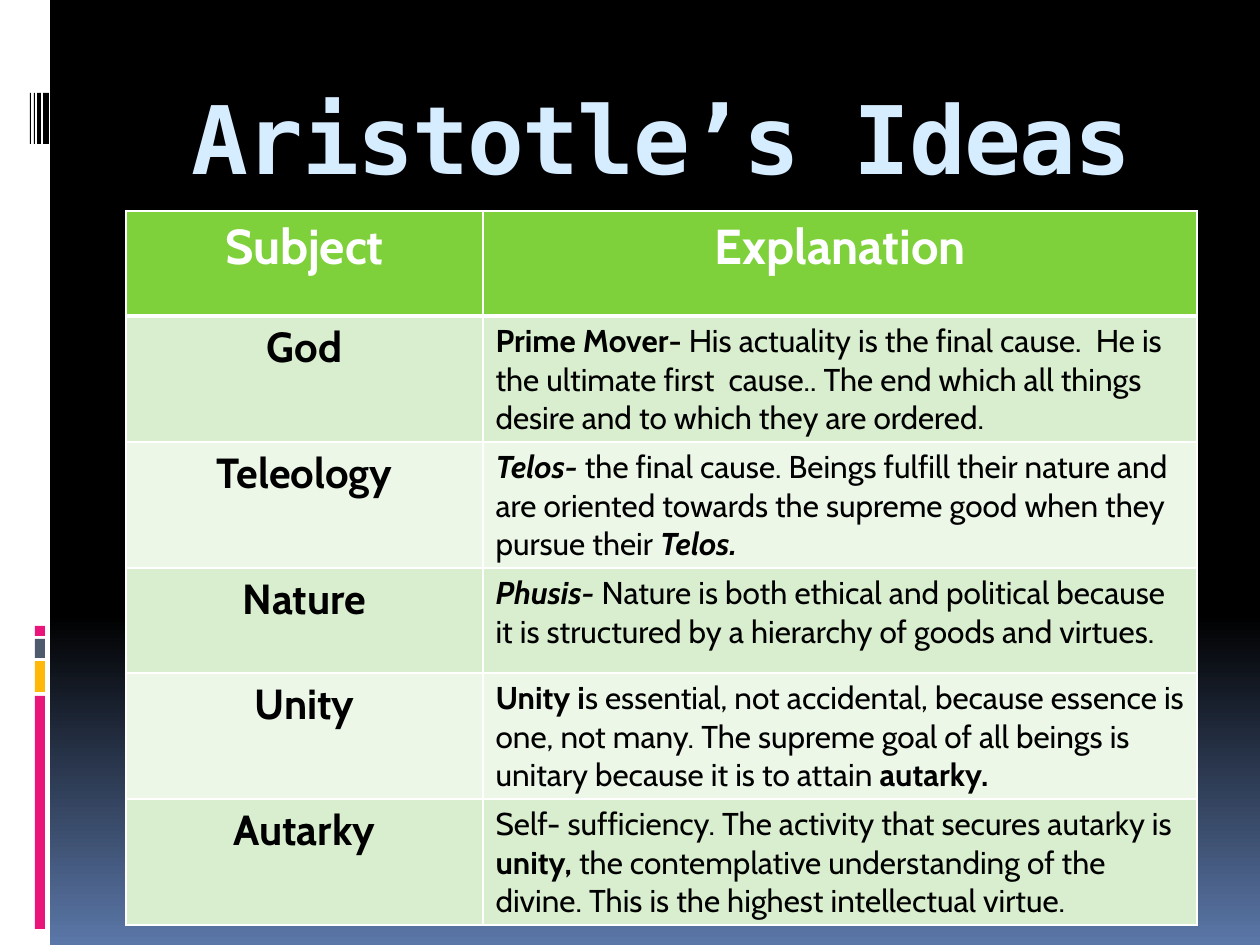
from copy import deepcopy

from lxml import etree
from pptx import Presentation, util as u
from pptx.dml.color import RGBColor
from pptx.enum import shapes, text
from pptx.oxml.ns import qn

SCALE = 914400 / 126  # EMU in one px
SANS, MONO = "Cabin", "DejaVu Sans Mono"
WHITE, BLACK, PINK = "FFFFFF", "000000", "EA157A"
GREEN, BANDS = "7FD13B", ("D8EECE", "ECF7E8")

# Left, top, width, height, colour
STRIPS = [
    (0, 0, 50, 945, WHITE),
    (35, 696, 10, 233, PINK),
    (35, 661, 10, 31, "FEB80A"),
    (35, 639, 10, 19, "4E5B6F"),
    (35, 626, 10, 10, PINK),
]
BARS = [(43, 6), (37, 4), (34, 1), (30, 1)]  # left, width

# Subject, then runs of (words, style): b bold, i italic
IDEAS = [
    ("God", [
        ("Prime Mover- ", "b"),
        ("His actuality is the final cause.  He is the ultimate first  cause.. "
         "The end which all things desire and to which they are ordered.", "")]),
    ("Teleology", [
        ("Telos-", "bi"),
        (" the final cause. Beings fulfill their nature and are oriented "
         "towards the supreme good when they pursue their ", ""),
        ("Telos.", "bi")]),
    ("Nature", [
        ("Phusis- ", "bi"),
        ("Nature is both ethical and political because it is structured by "
         "a hierarchy of goods and virtues.", "")]),
    ("Unity", [
        ("Unity i", "b"),
        ("s essential, not accidental, because essence is one, not many. "
         "The supreme goal of all beings is unitary because it is to attain ", ""),
        ("autarky.", "b")]),
    ("Autarky", [
        ("Self- sufficiency. The activity that secures autarky is ", ""),
        ("unity, ", "b"),
        ("the contemplative understanding of the divine. "
         "This is the highest intellectual virtue.", "")]),
]


def px(n):
    return u.Emu(round(n * SCALE))


def rgb(code):
    return RGBColor.from_string(code)


def paint(slide):
    """Black down to 65 %, then fading to blue."""
    fill = slide.background.fill
    fill.gradient()
    fill.gradient_angle = 270
    for stop, (pos, code) in zip(fill.gradient_stops, [(0, BLACK), (1, "5B77A8")]):
        stop.position = pos
        stop.color.rgb = rgb(code)
    first = next(slide.element.iter(qn("a:gs")))
    mid = deepcopy(first)
    mid.set("pos", "65000")
    first.addnext(mid)


def block(slide, left, top, width, height, code):
    rect = slide.shapes.add_shape(shapes.MSO_SHAPE.RECTANGLE,
                                  px(left), px(top), px(width), px(height))
    rect.shadow.inherit = False
    rect.fill.solid()
    rect.fill.fore_color.rgb = rgb(code)
    rect.line.fill.background()


def write(para, words, size, code, style="", face=SANS):
    run = para.add_run()
    run.text = words
    font = run.font
    font.name, font.size, font.color.rgb = face, u.Pt(size), rgb(code)
    font.bold, font.italic = "b" in style, "i" in style
    return run


def title(slide, words):
    box = slide.shapes.add_textbox(px(126), px(71), px(1071), px(126))
    frame = box.text_frame
    frame.word_wrap = True
    frame.vertical_anchor = text.MSO_ANCHOR.BOTTOM
    frame.margin_bottom = px(4)
    para = frame.paragraphs[0]
    para.alignment = text.PP_ALIGN.CENTER
    run = write(para, words, 54, "D6ECFF", "b", MONO)
    run.font._element.set("spc", "-100")


def edge(cell, side, width):
    line = etree.SubElement(cell._tc.get_or_add_tcPr(), qn("a:ln" + side),
                            w=str(u.Pt(width)))
    fill = etree.SubElement(line, qn("a:solidFill"))
    etree.SubElement(fill, qn("a:srgbClr"), val=WHITE)


def fill_cell(cell, runs, size, ink, back, row, center):
    for side in "LRTB":
        thick = (row, side) in [(0, "B"), (1, "T")]
        edge(cell, side, 3 if thick else 1)
    cell.fill.solid()
    cell.fill.fore_color.rgb = rgb(back)
    para = cell.text_frame.paragraphs[0]
    para.alignment = text.PP_ALIGN.CENTER if center else text.PP_ALIGN.LEFT
    for words, style in runs:
        write(para, words, size, ink, style)


def grid(slide):
    table = slide.shapes.add_table(len(IDEAS) + 1, 2, px(126), px(211),
                                   px(1071), px(617)).table
    for col, width in zip(table.columns, (357, 714)):
        col.width = px(width)
    for row, height in zip(table.rows, [105] * 5 + [92]):
        row.height = px(height)

    # Header, then banded rows
    for col, words in enumerate(("Subject", "Explanation")):
        fill_cell(table.cell(0, col), [(words, "b")], 28, WHITE, GREEN, 0, True)
    for row, (name, runs) in enumerate(IDEAS, 1):
        back = BANDS[(row - 1) % 2]
        fill_cell(table.cell(row, 0), [(name, "b")], 24, BLACK, back, row, True)
        fill_cell(table.cell(row, 1), runs, 18, BLACK, back, row, False)


def main():
    deck = Presentation()
    deck.slide_width, deck.slide_height = px(1260), px(945)
    slide = deck.slides.add_slide(deck.slide_layouts[6])
    paint(slide)

    # Side decoration
    for strip in STRIPS:
        block(slide, *strip)
    for left, width in BARS:
        block(slide, left, 93, width, 51, BLACK)

    title(slide, "Aristotle’s Ideas")
    grid(slide)
    deck.save("out.pptx")


if __name__ == "__main__":
    main()
